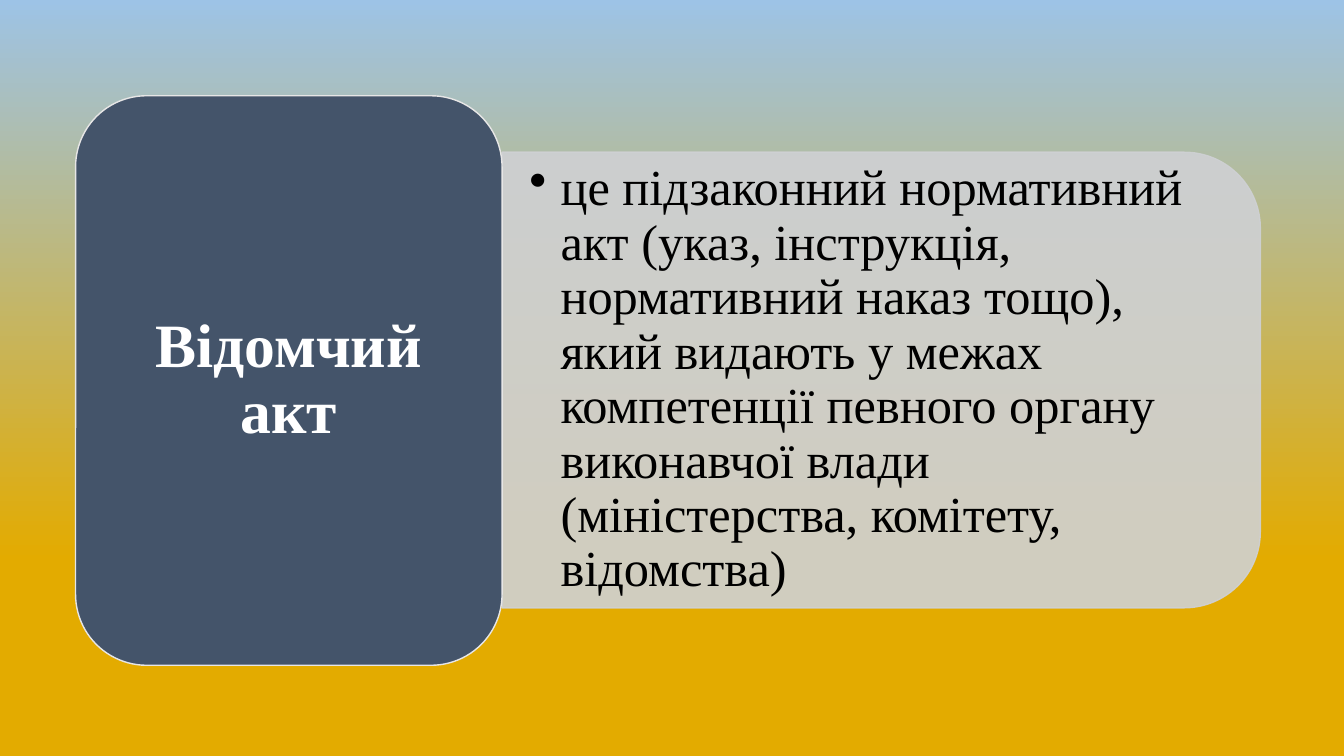
from lxml.etree import SubElement
from pptx import Presentation
from pptx.dml.color import RGBColor
from pptx.enum.shapes import MSO_SHAPE as Shape
from pptx.enum.text import MSO_ANCHOR as Anchor, PP_ALIGN as Align
from pptx.oxml.ns import qn
from pptx.util import Inches, Pt

GOLD = RGBColor(0xE3, 0xAB, 0x00)
SKY = RGBColor(0x9D, 0xC3, 0xE6)
PANEL = RGBColor(0xCF, 0xD1, 0xD4)
SLATE = RGBColor(0x44, 0x54, 0x6A)
BORDER = RGBColor(0xE7, 0xE6, 0xE6)
BLACK = RGBColor(0x00, 0x00, 0x00)
WHITE = RGBColor(0xFF, 0xFF, 0xFF)


def add_panel(slide, kind, box, fill, line, opacity=100):
    panel = slide.shapes.add_shape(kind, *map(Inches, box))
    panel.shadow.inherit = False
    panel.line.width = Pt(1)
    for paint, color in ((panel.fill, fill), (panel.line.fill, line)):
        paint.solid()
        paint.fore_color.rgb = color
    if opacity < 100:
        for color in panel._element.spPr.iter(qn("a:srgbClr")):
            SubElement(color, qn("a:alpha")).set("val", str(opacity * 1000))
    return panel


def write_text(shape, text, size, color, margins, bold=False,
               align=Align.LEFT, bullet_indent=None):
    frame = shape.text_frame
    frame.word_wrap = True
    frame.vertical_anchor = Anchor.MIDDLE
    frame.margin_left = frame.margin_right = Inches(margins[0])
    frame.margin_top = frame.margin_bottom = Inches(margins[1])
    paragraph = frame.paragraphs[0]
    paragraph.alignment = align
    paragraph.line_spacing = 0.9
    run = paragraph.add_run()
    run.text = text
    run.font.name = "Times New Roman"
    run.font.size = Pt(size)
    run.font.bold = bold
    run.font.color.rgb = color
    if bullet_indent:
        properties = paragraph._p.get_or_add_pPr()
        properties.set("marL", str(Inches(bullet_indent)))
        properties.set("indent", str(-Inches(bullet_indent)))
        SubElement(properties, qn("a:buChar")).set("char", "•")


presentation = Presentation()
presentation.slide_width = Inches(13.33)
presentation.slide_height = Inches(7.5)
slide = presentation.slides.add_slide(presentation.slide_layouts[6])

background = slide.background.fill
background.gradient()
background.gradient_angle = 90
for stop, position, color in zip(background.gradient_stops, (0.26, 1), (GOLD, SKY)):
    stop.position = position
    stop.color.rgb = color

definition_panel = add_panel(slide, Shape.ROUND_2_SAME_RECTANGLE,
                             (6.48, 0.01, 4.52, 7.52), PANEL, PANEL, opacity=90)
definition_panel.rotation = 90

definition = slide.shapes.add_textbox(*map(Inches, (4.98, 1.73, 7.3, 4.08)))
write_text(definition,
           "це підзаконний нормативний акт (указ, інструкція, нормативний наказ тощо), "
           "який видають у межах компетенції певного органу виконавчої влади "
           "(міністерства, комітету, відомства)",
           36, BLACK, (0.27, 0.14), bullet_indent=0.31)

term = add_panel(slide, Shape.ROUNDED_RECTANGLE, (0.75, 0.95, 4.23, 5.65), SLATE, BORDER)
write_text(term, "Відомчий акт", 44, WHITE, (0.18, 0.09), bold=True, align=Align.CENTER)

presentation.save("out.pptx")
